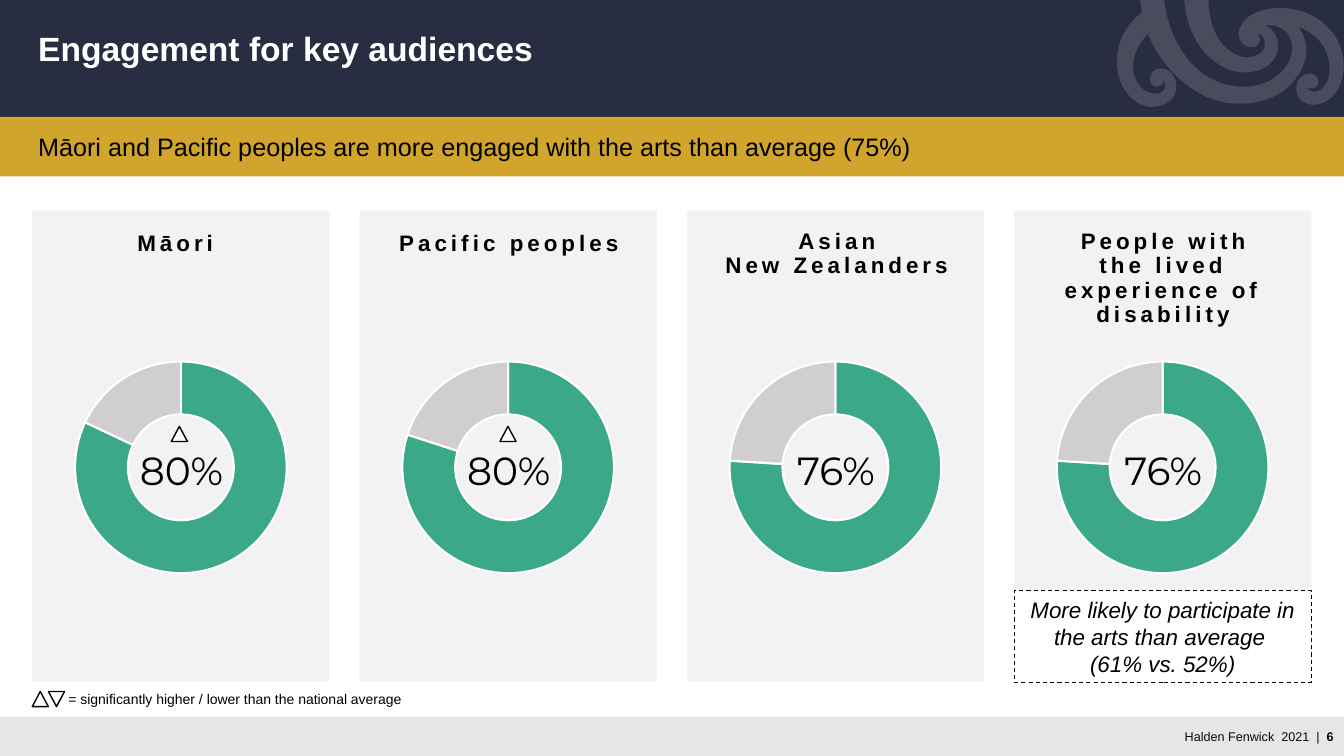
from lxml.etree import SubElement
from pptx import Presentation
from pptx.chart.data import CategoryChartData
from pptx.dml.color import RGBColor
from pptx.enum.chart import XL_CHART_TYPE
from pptx.enum.dml import MSO_LINE
from pptx.enum.shapes import MSO_SHAPE
from pptx.enum.text import MSO_ANCHOR, MSO_AUTO_SIZE, PP_ALIGN
from pptx.oxml import parse_xml
from pptx.oxml.ns import nsdecls, qn
from pptx.util import Inches, Pt

NAVY = RGBColor(0x28, 0x2D, 0x41)
GOLD = RGBColor(0xD1, 0xA4, 0x2B)
GREEN = RGBColor(0x3A, 0xA8, 0x89)
SILVER = RGBColor(0xD0, 0xCE, 0xCE)
PANEL = RGBColor(0xF2, 0xF2, 0xF2)
FOOTER = RGBColor(0xE6, 0xE6, 0xE6)
INK = RGBColor(0x0A, 0x0A, 0x0A)
BLACK = RGBColor(0, 0, 0)
WHITE = RGBColor(0xFF, 0xFF, 0xFF)

PAGE_WIDTH = 40 / 3
PANEL_LEFT, PANEL_TOP = 0.32, 2.09
PANEL_WIDTH, PANEL_HEIGHT = 2.95, 4.67
PANEL_STEP = (10.06 - PANEL_LEFT) / 3
PLOT = {"x": 0.144, "y": 0.281, "w": 0.712, "h": 0.529}
TRIANGLE_WIDTH, TRIANGLE_HEIGHT = 0.16, 0.15

AUDIENCES = [
    (["Māori "], 82, "80%", 0.34),
    (["Pacific peoples"], 80, "80%", 0.12),
    (["Asian", "New Zealanders"], 76, "76%", 0.12),
    (["People with", "the lived experience of disability"], 76, "76%", 0.16),
]

SPIRAL_START = (11.08, 0.61)
SPIRAL = [
    (11.08, 0.89, 11.27, 1.06, 11.42, 1.06), (11.6, 1.06, 11.67, 0.96, 11.67, 0.86),
    (11.67, 0.74, 11.59, 0.68, 11.52, 0.68), (11.46, 0.68, 11.41, 0.71, 11.41, 0.79),
    (11.41, 0.86, 11.47, 0.86, 11.48, 0.86), (11.49, 0.86, 11.54, 0.85, 11.54, 0.8),
    (11.54, 0.8, 11.56, 0.82, 11.56, 0.85), (11.56, 0.87, 11.55, 0.93, 11.46, 0.93),
    (11.36, 0.93, 11.24, 0.83, 11.24, 0.66), (11.24, 0.47, 11.39, 0.34, 11.39, 0.34),
    (11.53, 0.69, 11.88, 1.03, 12.29, 1.03), (12.81, 1.03, 12.96, 0.65, 12.96, 0.51),
    (12.96, 0.45, 12.95, 0.35, 12.88, 0.27), (12.88, 0.27, 13.19, 0.35, 13.19, 0.69),
    (13.19, 0.88, 13.07, 0.91, 13.03, 0.91), (12.98, 0.91, 12.97, 0.87, 12.97, 0.87),
    (13, 0.89, 13.08, 0.88, 13.08, 0.82), (13.08, 0.74, 13.02, 0.73, 12.99, 0.73),
    (12.96, 0.73, 12.86, 0.75, 12.86, 0.88), (12.86, 0.99, 12.95, 1.04, 13.03, 1.04),
    (13.17, 1.04, 13.33, 0.91, 13.33, 0.65), (13.33, 0.32, 13.04, 0.08, 12.71, 0.08),
    (12.37, 0.08, 12.29, 0.26, 12.29, 0.34), (12.29, 0.42, 12.35, 0.47, 12.41, 0.47),
    (12.48, 0.47, 12.5, 0.42, 12.5, 0.4), (12.5, 0.37, 12.49, 0.34, 12.47, 0.33),
    (12.47, 0.33, 12.55, 0.34, 12.55, 0.43), (12.55, 0.52, 12.46, 0.57, 12.37, 0.57),
    (12.29, 0.57, 12, 0.48, 11.99, 0), (11.75, 0),
    (11.79, 0.52, 12.14, 0.72, 12.34, 0.72), (12.54, 0.72, 12.68, 0.61, 12.68, 0.45),
    (12.68, 0.31, 12.55, 0.25, 12.55, 0.25), (12.72, 0.24, 12.82, 0.33, 12.82, 0.48),
    (12.82, 0.64, 12.65, 0.86, 12.34, 0.86), (11.85, 0.86, 11.59, 0.39, 11.55, 0),
    (11.31, 0), (11.32, 0.07, 11.33, 0.12, 11.33, 0.12),
    (11.33, 0.12, 11.08, 0.29, 11.08, 0.61),
]


def set_font(font, color=BLACK, **values):
    """Apply a colour and a dict of format values to a font."""
    for name, value in {"name": "Arial", **values}.items():
        setattr(font, name, value)
    font.fill.solid()
    font.fill.fore_color.rgb = color


def write(shape, lines, align=PP_ALIGN.LEFT, anchor=MSO_ANCHOR.TOP, wrap=True):
    """Fill a shape with paragraphs, each a list of (text, format values)."""
    frame = shape.text_frame
    settings = {"word_wrap": wrap, "vertical_anchor": anchor,
                "auto_size": MSO_AUTO_SIZE.SHAPE_TO_FIT_TEXT}
    for name, value in settings.items():
        setattr(frame, name, value)
    for index, line in enumerate(lines):
        para = frame.add_paragraph() if index else frame.paragraphs[0]
        para.alignment = align
        for text, values in line:
            span = para.add_run()
            span.text = text
            set_font(span.font, **values)


def add_text(shapes, bounds, spans, **layout):
    """Add a one-paragraph text box."""
    box = shapes.add_textbox(*map(Inches, bounds))
    write(box, [spans], **layout)
    return box


def add_box(shapes, kind, bounds, fill, line_width=None):
    """Add a filled preset shape, outlined in black when a width is given."""
    shape = shapes.add_shape(kind, *map(Inches, bounds))
    shape.shadow.inherit = False
    shape.fill.solid()
    shape.fill.fore_color.rgb = fill
    if line_width is None:
        shape.line.fill.background()
    else:
        shape.line.color.rgb = BLACK
        shape.line.width = Pt(line_width)
    return shape


def add_triangle(shapes, left, top, rotation=0):
    """Add a significance marker."""
    bounds = (left, top, TRIANGLE_WIDTH, TRIANGLE_HEIGHT)
    marker = add_box(shapes, MSO_SHAPE.ISOSCELES_TRIANGLE, bounds, WHITE, 1)
    marker.rotation = rotation


def add_spiral(shapes):
    """Draw the translucent spiral ornament in the header with cubic curves."""
    corners = [(Inches(x), Inches(y)) for x, y in [SPIRAL_START] + [c[-2:] for c in SPIRAL]]
    builder = shapes.build_freeform(*corners[0], scale=1.0)
    builder.add_line_segments(corners[1:], close=True)
    spiral = builder.convert_to_shape()
    spiral.shadow.inherit = False
    spiral.fill.solid()
    spiral.fill.fore_color.rgb = WHITE
    spiral.line.fill.background()
    SubElement(spiral.fill._xPr.find(qn("a:solidFill"))[0], qn("a:alpha"), val="15000")
    segments = spiral._element.findall(".//" + qn("a:lnTo"))
    for segment, curve in zip(segments, SPIRAL):
        if len(curve) == 6:
            bend = parse_xml(f'<a:cubicBezTo {nsdecls("a")}/>')
            for x, y in zip(curve[::2], curve[1::2]):
                SubElement(bend, qn("a:pt"), x=str(Inches(x) - spiral.left),
                           y=str(Inches(y) - spiral.top))
            segment.getparent().replace(segment, bend)


def manual_layout(values, inner=False):
    """Build a chart layout element from fractions of the chart size."""
    target = '<c:layoutTarget val="inner"/>' if inner else ""
    modes = "".join(f'<c:{name}Mode val="edge"/>' for name in "xy")
    sizes = "".join(f'<c:{name} val="{value}"/>' for name, value in values.items())
    return parse_xml(f'<c:layout {nsdecls("c")}><c:manualLayout>{target}{modes}{sizes}'
                     '</c:manualLayout></c:layout>')


def set_title(chart, lines, left):
    """Write the letter-spaced chart title."""
    title = chart.chart_title
    para = title.text_frame.paragraphs[0]
    for index, text in enumerate(lines):
        if index:
            para.add_line_break()
        span = para.add_run()
        span.text = text
        set_font(span.font, size=Pt(16), bold=True)
        span.font._element.set("spc", "300")
    title.include_in_layout = False
    element = title._element
    for layout in element.findall(qn("c:layout")):
        element.remove(layout)
    element.find(qn("c:tx")).addnext(manual_layout({"x": left, "y": 0.03}))


def add_doughnut(shapes, left, lines, share, title_left):
    """Add one audience panel with its doughnut chart."""
    data = CategoryChartData()
    data.categories = ["1", "2"]
    data.add_series("Series 1", (share, 100 - share))
    bounds = (left, PANEL_TOP, PANEL_WIDTH, PANEL_HEIGHT)
    chart = shapes.add_chart(XL_CHART_TYPE.DOUGHNUT, *map(Inches, bounds), data).chart
    chart.has_legend = False
    set_font(chart.font, size=Pt(10))
    set_title(chart, lines, title_left)
    plot = chart.plots[0]
    plot.vary_by_categories = True
    for index, color in enumerate((GREEN, SILVER)):
        style = plot.series[0].points[index].format
        style.fill.solid()
        style.fill.fore_color.rgb = color
        style.line.color.rgb = WHITE
        style.line.width = Pt(1.5)
    space = chart._chartSpace
    space.find(".//" + qn("c:holeSize")).set("val", "75")
    area = space.find(".//" + qn("c:plotArea"))
    for layout in area.findall(qn("c:layout")):
        area.remove(layout)
    area.insert(0, manual_layout(PLOT, inner=True))
    space.find(qn("c:chart")).addnext(parse_xml(
        f'<c:spPr {nsdecls("c", "a")}><a:solidFill><a:srgbClr val="{PANEL}"/></a:solidFill>'
        '<a:ln><a:noFill/></a:ln></c:spPr>'))


def add_key(shapes):
    """Add the grouped key to the significance markers."""
    key = shapes.add_group_shape().shapes
    add_text(key, (0.58, 6.8, 3.53, 0.27),
             [("= significantly higher / lower than the national average", {"size": Pt(10)})],
             anchor=MSO_ANCHOR.MIDDLE, wrap=False)
    for index in range(2):
        add_triangle(key, PANEL_LEFT + index * TRIANGLE_WIDTH, 6.86, 180 * index)


def main():
    """Build and save the slide."""
    deck = Presentation()
    deck.slide_width, deck.slide_height = Inches(PAGE_WIDTH), Inches(7.5)
    shapes = deck.slides.add_slide(deck.slide_layouts[6]).shapes
    add_box(shapes, MSO_SHAPE.RECTANGLE, (0, 0, PAGE_WIDTH, 1.18), NAVY)
    add_spiral(shapes)
    add_box(shapes, MSO_SHAPE.RECTANGLE, (0, 7.11, PAGE_WIDTH, 0.39), FOOTER)
    small = {"size": Pt(9), "color": INK}
    add_text(shapes, (11.57, 7.18, 1.76, 0.25),
             [("Halden Fenwick  2021  |  ", small), ("6", {**small, "bold": True})],
             align=PP_ALIGN.RIGHT, anchor=MSO_ANCHOR.MIDDLE, wrap=False)
    heading = add_text(shapes, (0.28, 0.27, 12.78, 0.46), [
        ("Engagement for key audiences", {"size": Pt(24), "bold": True, "color": WHITE})])
    heading.text_frame.paragraphs[0].line_spacing = 0.9
    add_box(shapes, MSO_SHAPE.RECTANGLE, (0, 1.16, PAGE_WIDTH, 0.59), GOLD)
    add_text(shapes, (0.28, 1.25, 12.78, 0.4), [
        ("Māori and Pacific peoples are more engaged with the arts than average (75%)",
         {"size": Pt(18)})])
    for index, (lines, share, label, title_left) in enumerate(AUDIENCES):
        left = PANEL_LEFT + index * PANEL_STEP
        add_doughnut(shapes, left, lines, share, title_left)
        add_text(shapes, (left + 0.92, 4.38, 1.12, 0.57),
                 [(label, {"size": Pt(28), "name": "Montserrat"})],
                 align=PP_ALIGN.CENTER, anchor=MSO_ANCHOR.MIDDLE, wrap=False)
    for left in (4.96, 1.7):
        add_triangle(shapes, left, 4.23)
    note = add_box(shapes, MSO_SHAPE.RECTANGLE, (10.06, 5.86, 2.95, 0.91), WHITE, 0.75)
    note.line.dash_style = MSO_LINE.DASH
    italic = {"size": Pt(16), "italic": True}
    write(note, [[("More likely to participate in the arts than average ", italic)],
                 [("(61% vs. 52%)", italic)]], align=PP_ALIGN.CENTER, anchor=MSO_ANCHOR.MIDDLE)
    add_key(shapes)
    deck.save("out.pptx")


if __name__ == "__main__":
    main()
